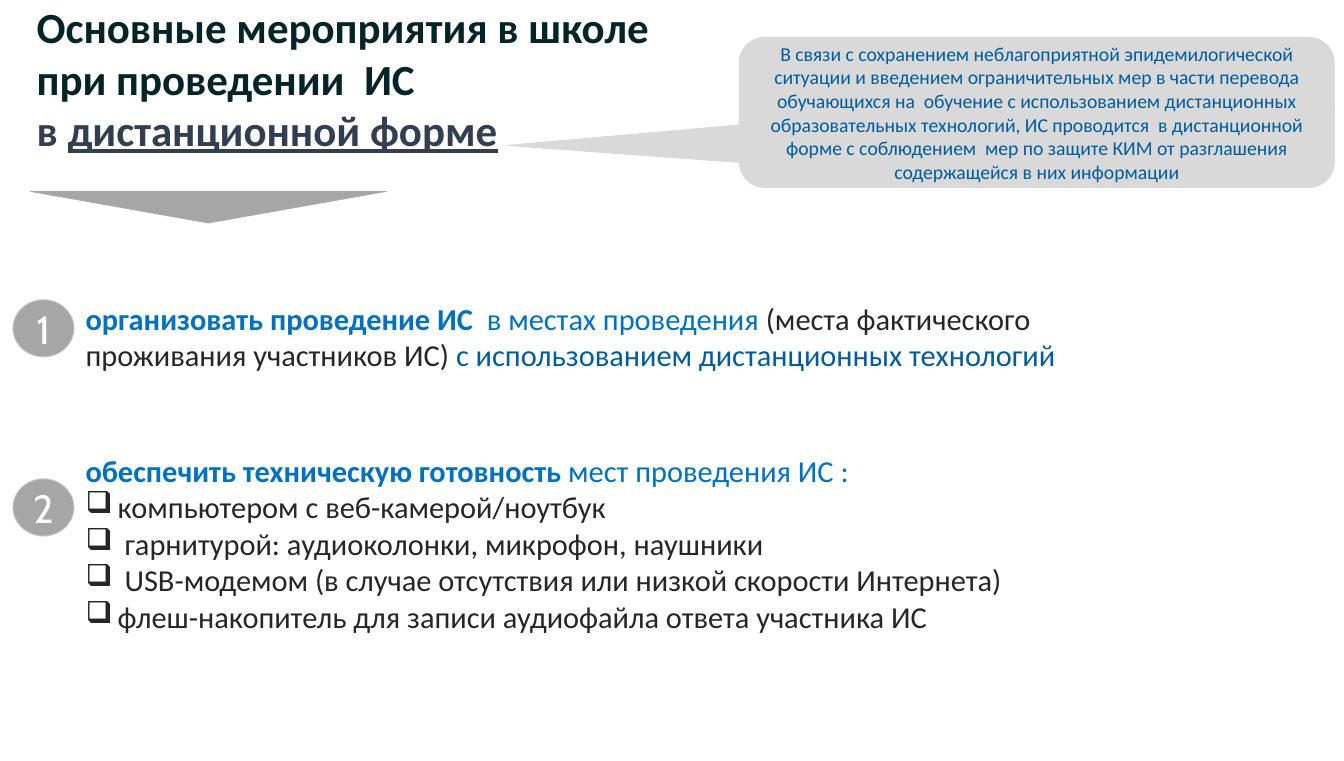
from lxml import etree
from pptx import Presentation
from pptx.dml.color import RGBColor
from pptx.enum.shapes import MSO_SHAPE
from pptx.enum.text import MSO_ANCHOR, PP_ALIGN
from pptx.oxml.ns import qn
from pptx.util import Pt

BLUE = RGBColor(0x00, 0x70, 0xC0)
NAVY = RGBColor(0x00, 0x5C, 0x9D)
INK = RGBColor(0x26, 0x26, 0x26)
DARK = RGBColor(0x05, 0x24, 0x27)
SLATE = RGBColor(0x33, 0x3F, 0x50)
WHITE = RGBColor(0xFF, 0xFF, 0xFF)
GREY = RGBColor(0xA6, 0xA6, 0xA6)
EDGE = RGBColor(0xAF, 0xAB, 0xAB)
RIM = RGBColor(0xD0, 0xCE, 0xCE)
PALE = RGBColor(0xD9, 0xD9, 0xD9)

CIRCLE = MSO_SHAPE.FLOWCHART_CONNECTOR
ARROW = MSO_SHAPE.ISOSCELES_TRIANGLE
CALLOUT = MSO_SHAPE.ROUNDED_RECTANGULAR_CALLOUT
MIDDLE = MSO_ANCHOR.MIDDLE
CENTER = PP_ALIGN.CENTER

INDENT = Pt(36)
LEFT = 88.56


class Page:
    font = "Calibri"

    def __init__(self, slide):
        self.shapes = slide.shapes

    def style(self, run, size, color, bold=False, line=False, font=None):
        face = run.font
        face.name = font or self.font
        face.size = Pt(size)
        face.color.rgb = color
        face.bold = bold
        face.underline = line

    def bullet(self, para):
        props = para._p.get_or_add_pPr()
        props.set("marL", str(INDENT))
        props.set("indent", str(-INDENT))
        etree.SubElement(props, qn("a:buChar")).set("char", "❑")

    def text(self, box, size, lines, bullets=False):
        """Each line is a list of (text, colour, bold, underline) runs."""
        frame = self.shapes.add_textbox(*map(Pt, box)).text_frame
        frame.word_wrap = True
        for i, parts in enumerate(lines):
            para = frame.add_paragraph() if i else frame.paragraphs[0]
            if bullets and i:
                self.bullet(para)
            for words, *look in parts:
                run = para.add_run()
                run.text = words
                self.style(run, size, *look)

    def shape(self, kind, box, fill, edge):
        item = self.shapes.add_shape(kind, *map(Pt, box))
        item.shadow.inherit = False
        item.fill.solid()
        item.fill.fore_color.rgb = fill
        item.line.color.rgb = edge
        item.line.width = Pt(1)
        return item

    def label(self, item, words, size, color, font=None):
        frame = item.text_frame
        frame.word_wrap = True
        frame.vertical_anchor = MIDDLE
        para = frame.paragraphs[0]
        para.text = words
        para.alignment = CENTER
        self.style(para.runs[0], size, color, font=font)

    def badge(self, top, number):
        item = self.shape(CIRCLE, (14.4, top, 68.4, 64.08), GREY, RIM)
        self.label(item, number, 44, WHITE, "Cabin")


def main():
    deck = Presentation()
    deck.slide_width, deck.slide_height = Pt(1502.64), Pt(850.32)
    page = Page(deck.slides.add_slide(deck.slide_layouts[6]))

    page.text((LEFT, 331.2, 1190.16, 104.4), 34, [[
        ("организовать проведение ИС  ", BLUE, True),
        ("в местах проведения ", BLUE),
        ("(места фактического проживания участников ИС) ", INK),
        ("с использованием дистанционных технологий", NAVY),
    ]])

    needs = [
        "компьютером с веб-камерой/ноутбук",
        " гарнитурой: аудиоколонки, микрофон, наушники",
        " USB-модемом (в случае отсутствия или низкой скорости Интернета)",
        "флеш-накопитель для записи аудиофайла ответа участника ИС",
    ]
    head = [("обеспечить техническую готовность ", BLUE, True),
            ("мест проведения ИС :", BLUE)]
    page.text((LEFT, 501.12, 1127.52, 213.12), 34,
              [head] + [[(need, INK)] for need in needs], bullets=True)

    page.text((33.84, -2.88, 837.36, 181.44), 48, [
        [("Основные мероприятия в школе", DARK, True)],
        [("при проведении  ИС", DARK, True)],
        [("в ", SLATE, True), ("дистанционной форме", SLATE, True, True)],
    ])

    page.badge(334.8, "1")
    page.badge(534.96, "2")

    arrow = page.shape(ARROW, (33.84, 213.84, 398.16, 35.28), GREY, EDGE)
    arrow.rotation = 180

    note = page.shape(CALLOUT, (826.56, 41.76, 665.28, 167.76), PALE, PALE)
    for i, value in enumerate((-0.89, 0.22, 0.17)):
        note.adjustments[i] = value
    page.label(
        note,
        "В связи с сохранением неблагоприятной эпидемилогической ситуации "
        "и введением ограничительных мер в части перевода обучающихся на  "
        "обучение с использованием дистанционных образовательных технологий, "
        "ИС проводится  в дистанционной форме с соблюдением  мер по защите "
        "КИМ от разглашения содержащейся в них информации",
        22, NAVY)

    deck.save("out.pptx")


if __name__ == "__main__":
    main()
